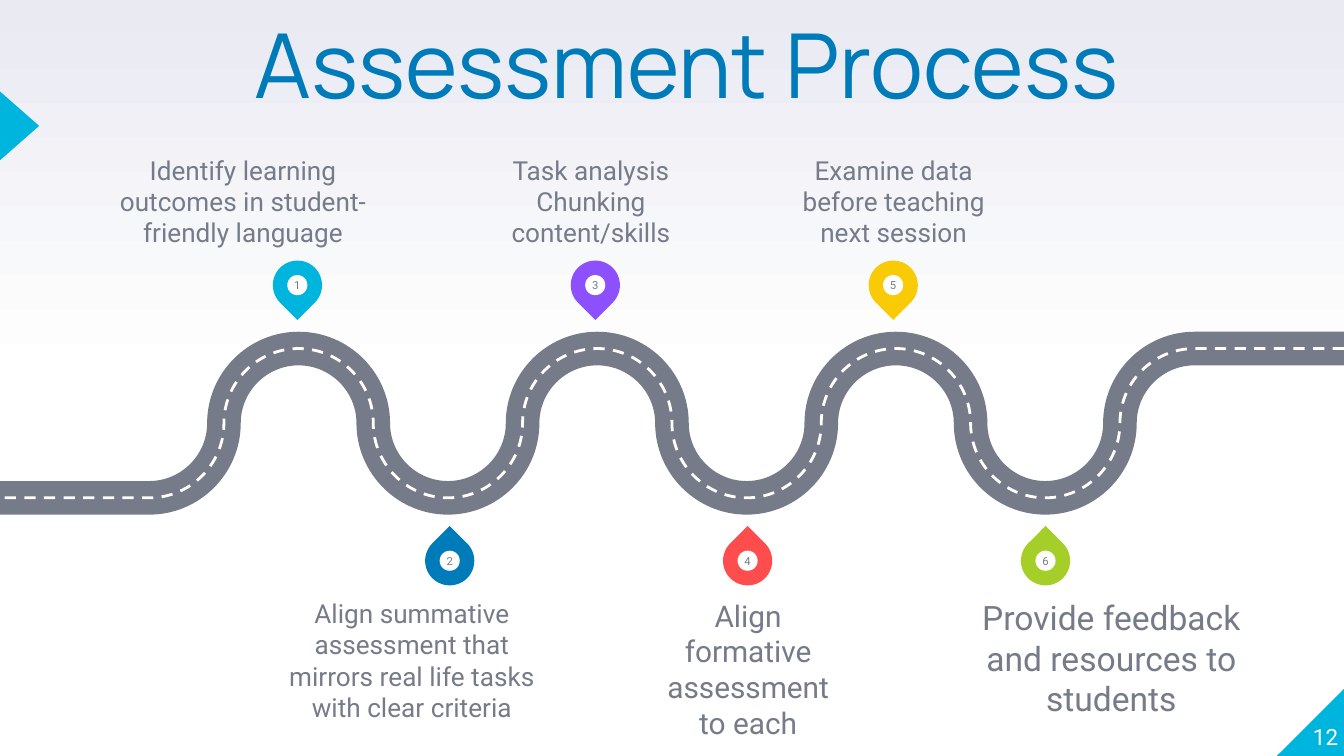
"""Build the Assessment Process road map slide."""
from lxml import etree
from pptx import Presentation, util as u
from pptx.dml.color import RGBColor
from pptx.enum import dml, shapes, text
from pptx.oxml import ns

COLOURS = {
    "white": "FFFFFF", "mist": "E9EAF2", "grey": "757B89", "cyan": "00B5DD",
    "blue": "007BB9", "purple": "8C50FF", "red": "FF4D4D", "yellow": "F9CB07",
    "green": "A6CE28",
}
WIDTH, HEIGHT = 25.4, 14.29
ROAD_MIDDLE = 8
BEND_RADIUS = WIDTH / 18
QUARTER_BENDS = 14
ARC_HANDLE = 0.55
PIN_SIZE, DOT_SIZE, PIN_PITCH = 0.93, 0.38, 5.63
PIN_ROWS = [
    {"first": 5.62, "middle": 5.39, "rotation": 135,
     "fills": ["cyan", "purple", "yellow"]},
    {"first": 8.5, "middle": 10.6, "rotation": 315,
     "fills": ["blue", "red", "green"]},
]
BOTTOM, TOP = text.MSO_ANCHOR.BOTTOM, text.MSO_ANCHOR.TOP
STEPS = [
    ("Identify learning outcomes in student-friendly language", 1.79, 5.61, 14, BOTTOM),
    ("Task analysis\nChunking content/skills", 9.38, 3.58, 14, BOTTOM),
    ("Examine data before teaching next session", 15.1, 3.58, 14, BOTTOM),
    ("Align summative assessment that mirrors real life tasks with clear criteria",
     5.27, 5.03, 14, TOP),
    ("Align formative assessment to each", 12.35, 3.58, 16, TOP),
    ("Provide feedback and resources to students", 17.98, 6.05, 18, TOP),
]
STEP_TOPS = {BOTTOM: 3.22, TOP: 11.29}
STEP_HEIGHT = 1.47


def colour(name):
    """Return the named colour."""
    return RGBColor.from_string(COLOURS[name])


def apply(target, values):
    """Set each format value on the target."""
    for name, value in values.items():
        setattr(target, name, value)


def paint_background(slide):
    """Fade the slide from white up to pale mist."""
    fill = slide.background.fill
    fill.gradient()
    fill.gradient_angle = 90
    for stop, (position, name) in zip(
            fill.gradient_stops, [(0.5, "white"), (1, "mist")]):
        stop.position = position
        stop.color.rgb = colour(name)


def write(frame, words, size, ink, font="Roboto", anchor=TOP,
          align=text.PP_ALIGN.CENTER, spacing=None):
    """Write formatted paragraphs in a frame without margins."""
    apply(frame, {"text": words, "word_wrap": True, "vertical_anchor": anchor,
                  "margin_left": 0, "margin_right": 0,
                  "margin_top": 0, "margin_bottom": 0})
    for paragraph in frame.paragraphs:
        apply(paragraph, {"alignment": align, "line_spacing": spacing})
        for run in paragraph.runs:
            apply(run.font, {"name": font, "size": u.Pt(size)})
            run.font.color.rgb = colour(ink)


def add_label(slide, words, box, size, ink="grey", **style):
    """Add a text box."""
    label = slide.shapes.add_textbox(*map(u.Cm, box))
    write(label.text_frame, words, size, ink, **style)


def add_solid(parent, preset, box, fill, rotation=0):
    """Add a flat preset shape without outline."""
    solid = parent.add_shape(preset, *map(u.Cm, box))
    solid.shadow.inherit = False
    solid.fill.solid()
    solid.fill.fore_color.rgb = colour(fill)
    solid.line.fill.background()
    solid.rotation = rotation
    return solid


def road_points():
    """List the quarter bends from the right edge to the left."""
    heights = [ROAD_MIDDLE + BEND_RADIUS * side for side in (-1, 0, 1, 0)]
    bends = [(WIDTH - BEND_RADIUS * (2 + quarter), heights[quarter % 4])
             for quarter in range(QUARTER_BENDS + 1)]
    route = [(WIDTH, heights[0]), *bends, (0, heights[2])]
    return [(u.Cm(x), u.Cm(y)) for x, y in route]


def round_bends(road):
    """Turn the straight quarter bends into curves."""
    segments = list(road._element.iter(ns.qn("a:lnTo")))
    ends = [[int(segment[0].get(axis)) for axis in "xy"] for segment in segments]
    for quarter in range(QUARTER_BENDS):
        (x, y), (end_x, end_y) = ends[quarter:quarter + 2]
        across, down = ARC_HANDLE * (end_x - x), ARC_HANDLE * (end_y - y)
        if quarter % 2:
            handles = [(x, y + down), (end_x - across, end_y)]
        else:
            handles = [(x + across, y), (end_x, end_y - down)]
        segment = segments[quarter + 1]
        curve = etree.Element(ns.qn("a:cubicBezTo"))
        for point in [*handles, (end_x, end_y)]:
            etree.SubElement(curve, ns.qn("a:pt"),
                             {axis: str(round(at)) for axis, at in zip("xy", point)})
        segment.getparent().replace(segment, curve)


def add_road(slide, ink, width, dash=None):
    """Draw one stroke along the road."""
    start, *rest = road_points()
    builder = slide.shapes.build_freeform(*start)
    builder.add_line_segments(rest, close=False)
    road = builder.convert_to_shape()
    round_bends(road)
    road.shadow.inherit = False
    road.fill.background()
    road.line.color.rgb = colour(ink)
    apply(road.line, {"width": u.Pt(width), "dash_style": dash})


def add_pin(slide, number, centre, middle, fill, rotation):
    """Add a numbered map pin."""
    pin = slide.shapes.add_group_shape().shapes

    def square(size):
        """Return a centred square box."""
        return centre - size / 2, middle - size / 2, size, size

    add_solid(pin, shapes.MSO_SHAPE.TEAR, square(PIN_SIZE), fill, rotation)
    dot = add_solid(pin, shapes.MSO_SHAPE.OVAL, square(DOT_SIZE), "white")
    write(dot.text_frame, str(number), 6, "grey", anchor=text.MSO_ANCHOR.MIDDLE)


def main():
    """Build and save the slide."""
    deck = Presentation()
    apply(deck, {"slide_width": u.Cm(WIDTH), "slide_height": u.Cm(HEIGHT)})
    slide = deck.slides.add_slide(deck.slide_layouts[6])
    paint_background(slide)
    add_solid(slide.shapes, shapes.MSO_SHAPE.RIGHT_TRIANGLE,
              (24.13, 12.99, 1.3, 1.3), "cyan", 270)
    add_solid(slide.shapes, shapes.MSO_SHAPE.ISOSCELES_TRIANGLE,
              (-0.28, 2.01, 1.3, 0.74), "cyan", 90)
    add_label(slide, "Assessment Process", (1.28, 0.56, 23.39, 4.14), 48, "blue",
              font="Manrope", spacing=0.8)
    add_label(slide, "12", (24.02, 12.88, 1.27, 1.3), 12, "white",
              anchor=BOTTOM, align=text.PP_ALIGN.RIGHT)
    add_road(slide, "grey", 18)
    add_road(slide, "white", 1.5, dml.MSO_LINE.DASH)
    for first_number, row in enumerate(PIN_ROWS, 1):
        for index, fill in enumerate(row["fills"]):
            add_pin(slide, first_number + 2 * index,
                    row["first"] + PIN_PITCH * index, row["middle"],
                    fill, row["rotation"])
    for words, left, width, size, anchor in STEPS:
        add_label(slide, words, (left, STEP_TOPS[anchor], width, STEP_HEIGHT),
                  size, anchor=anchor)
    deck.save("out.pptx")


if __name__ == "__main__":
    main()
